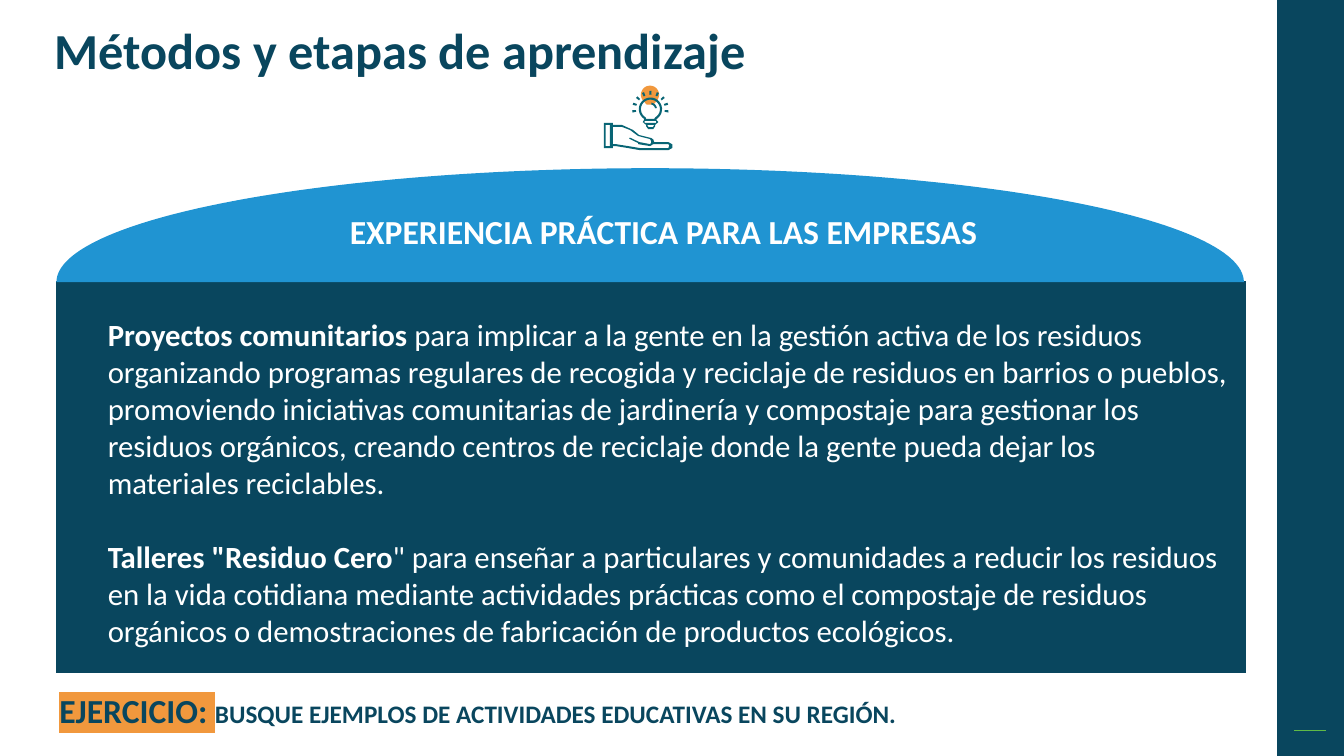
from math import cos, radians, sin

from lxml import etree
from pptx import Presentation
from pptx.dml import color
from pptx.enum import shapes, text
from pptx.oxml import ns
from pptx.util import Pt

COLORS = {
    "navy": "09465E",
    "blue": "2094D2",
    "white": "FFFFFF",
    "orange": "F1983D",
    "teal": "086575",
    "green": "60BA47",
}
FONT = "Calibri"

PALM = [
    [(46.1, 40.3), (36, 40.3), (35.3, 38.4), (33.8, 37.4), (25.2, 35.3), (20.9, 31.7),
     (13, 28.1), (6.5, 28.1), (6.5, 26.6), (0, 26.6), (0, 44.6), (6.5, 44.6), (6.5, 43.2),
     (8.6, 43.2), (17.3, 44.6), (25.9, 46.1), (46.1, 46.1), (49, 44.5), (49, 42)],
    [(1.4, 28.1), (4.3, 28.1), (4.3, 43.2), (1.4, 43.2)],
    [(46.1, 44.6), (25.9, 44.6), (17.3, 43.2), (8.6, 41.8), (6.5, 41.8), (6.5, 29.5),
     (13, 29.5), (18.7, 31.7), (24.5, 36), (33.1, 38.2), (33.8, 39.6), (33.8, 41),
     (33.1, 41.8), (25.2, 40.3), (19.4, 37.4), (18, 37.4), (18.7, 38.2), (24.5, 41),
     (24.5, 41.8), (33.1, 43.2), (35.3, 41.8), (46.1, 41.8), (46.8, 42.5)],
]
BULB_BASE = [(37.4, 24.5), (38.9, 26), (36.7, 28.1), (36.7, 29), (35.3, 31), (31.7, 31),
             (30.2, 29), (30.2, 28.1), (27.8, 26), (28.8, 24.5)]
BULB_NECK = [(36, 23.8), (30.2, 23.8)]
COLLAR = [(29.2, 25.2), (37.4, 25.2), (37.4, 26.6), (29.2, 26.6)]
TIP = [(31, 28.1), (36, 28.1), (35, 29.7), (32, 29.7)]


def rgb(name):
    """Return the named colour."""
    return color.RGBColor.from_string(COLORS[name])


def paint(shape, fill):
    """Give a shape a flat fill with no line or shadow."""
    shape.shadow.inherit = False
    shape.fill.solid()
    shape.fill.fore_color.rgb = rgb(fill)
    shape.line.fill.background()


def arc(center, across, down, start, end, steps=24):
    """Return points along an elliptical arc."""
    angles = [radians(start + (end - start) * i / steps) for i in range(steps + 1)]
    return [(center[0] + across * cos(a), center[1] + down * sin(a)) for a in angles]


def band(center, angle, spread, inner, outer):
    """Return the outline of a piece of a ring."""
    first, last = angle - spread, angle + spread
    return (arc(center, outer, outer, first, last, 8)
            + arc(center, inner, inner, last, first, 8))


def add_outline(page, box, contours, fill):
    """Draw closed contours placed relative to the box."""
    placed = [[(Pt(box[0] + x), Pt(box[1] + y)) for x, y in points] for points in contours]
    builder = page.shapes.build_freeform(*placed[0][0], scale=1.0)
    for number, points in enumerate(placed):
        if number:
            builder.move_to(*points[0])
        builder.add_line_segments(points[1:], close=True)
    paint(builder.convert_to_shape(), fill)


def place(shape, box):
    """Move a shape to the box."""
    shape.left, shape.top, shape.width, shape.height = map(Pt, box)


def set_frame(frame, anchor=text.MSO_ANCHOR.TOP):
    """Give a text frame fixed size, wrapping and standard margins."""
    frame.word_wrap = True
    frame.auto_size = text.MSO_AUTO_SIZE.NONE
    frame.vertical_anchor = anchor
    frame.margin_left = frame.margin_right = Pt(7.2)
    frame.margin_top = frame.margin_bottom = Pt(3.6)


def add_span(para, words, size, fill, bold=True):
    """Add one formatted run and return it."""
    span = para.add_run()
    span.text = words
    span.font.name = FONT
    span.font.size = Pt(size)
    span.font.bold = bold
    span.font.color.rgb = rgb(fill)
    return span


def highlight(span, name):
    """Put a highlight colour behind a run."""
    mark = etree.Element(ns.qn("a:highlight"))
    etree.SubElement(mark, ns.qn("a:srgbClr"), val=COLORS[name])
    span.font._element.find(ns.qn("a:solidFill")).addnext(mark)


def add_sidebar(page, box):
    """Draw the side strip and its short rule."""
    left, top, width, height = box
    strip = page.shapes.add_shape(shapes.MSO_SHAPE.RECTANGLE, *map(Pt, box))
    paint(strip, "navy")
    level = Pt(top + height - 18)
    rule = page.shapes.add_connector(shapes.MSO_CONNECTOR.STRAIGHT, Pt(left + 12.3), level,
                                     Pt(left + 34.6), level)
    rule.line.color.rgb = rgb("green")
    rule.line.width = Pt(1)
    etree.SubElement(rule.element.spPr, ns.qn("a:effectLst"))


def add_title(page, box):
    """Fill the title placeholder."""
    title = page.shapes.title
    place(title, box)
    set_frame(title.text_frame, text.MSO_ANCHOR.MIDDLE)
    para = title.text_frame.paragraphs[0]
    para.alignment = text.PP_ALIGN.LEFT
    para.line_spacing = 0.9
    add_span(para, "Métodos y etapas de aprendizaje", 36, "navy")


def add_icon(page, box):
    """Draw the hand holding a light bulb."""
    center = (33.3, 16.8)
    glow = arc((33, 6.5), 6.5, 6.5, 140, 400) + [(35.6, 13.5), (30.6, 13.5)]
    glass = arc(center, 8.3, 8.3, 125, 415) + BULB_BASE
    hollow = arc(center, 6.8, 6.8, 120, 420) + BULB_NECK
    add_outline(page, box, [glow], "orange")
    add_outline(page, box, [glass, hollow, COLLAR, TIP], "teal")
    add_outline(page, box, [band(center, -45, 35, 3.4, 4.7)], "teal")
    for step in range(-4, 5):
        add_outline(page, box, [band(center, -90 + step * 24.25, 3.5, 10.3, 13)], "teal")
    add_outline(page, box, PALM, "teal")


def add_dome(page, box):
    """Draw the domed heading above the panel."""
    left, top, width, height = box
    half = arc((width / 2, height), width / 2, height, 180, 360, 120)
    add_outline(page, box, [half], "blue")
    heading = page.shapes.add_textbox(Pt(left + 103.7), Pt(top + 26.7), Pt(660), Pt(36))
    set_frame(heading.text_frame)
    para = heading.text_frame.paragraphs[0]
    para.alignment = text.PP_ALIGN.CENTER
    add_span(para, "EXPERIENCIA PRÁCTICA PARA LAS EMPRESAS", 24, "white")


def add_panel(page, box, items):
    """Draw the panel and put the body placeholder on it."""
    left, top, width, height = box
    add_outline(page, box, [[(0, 0), (width, 0), (width, height), (0, height)]], "navy")
    body = page.placeholders[1]
    page.shapes.element.append(body.element)
    place(body, (left + 29.5, top + 20.9, 818.6, 247))
    paint(body, "navy")
    frame = body.text_frame
    set_frame(frame)
    for number, (lead, rest) in enumerate(items):
        para = frame.add_paragraph() if number else frame.paragraphs[0]
        props = para._p.get_or_add_pPr()
        props.set("marL", "0")
        props.set("indent", "0")
        etree.SubElement(props, ns.qn("a:buNone"))
        para.space_before = Pt(26.5 if number else 0)
        add_span(para, lead, 22, "white")
        add_span(para, rest, 22, "white", bold=False)


def add_exercise(page, box):
    """Write the exercise line."""
    note = page.shapes.add_textbox(*map(Pt, box))
    set_frame(note.text_frame)
    para = note.text_frame.paragraphs[0]
    highlight(add_span(para, "EJERCICIO: ", 24, "navy"), "orange")
    add_span(para, "BUSQUE EJEMPLOS DE ACTIVIDADES EDUCATIVAS EN SU REGIÓN.", 18, "navy")


def main():
    """Build the slide and save it."""
    deck = Presentation()
    deck.slide_width, deck.slide_height = Pt(960), Pt(540)
    page = deck.slides.add_slide(deck.slide_layouts[1])
    add_sidebar(page, (912.2, 0, 47.8, 540))
    add_title(page, (31.7, 17.3, 629.3, 41.8))
    add_panel(page, (40.3, 200.9, 849.6, 280), [
        ("Proyectos comunitarios ",
         "para implicar a la gente en la gestión activa de los residuos organizando programas "
         "regulares de recogida y reciclaje de residuos en barrios o pueblos, promoviendo "
         "iniciativas comunitarias de jardinería y compostaje para gestionar los residuos "
         "orgánicos, creando centros de reciclaje donde la gente pueda dejar los materiales "
         "reciclables."),
        ('Talleres "Residuo Cero',
         '" para enseñar a particulares y comunidades a reducir los residuos en la vida '
         "cotidiana mediante actividades prácticas como el compostaje de residuos orgánicos o "
         "demostraciones de fabricación de productos ecológicos."),
    ])
    add_dome(page, (40.3, 120.2, 848.2, 81.4))
    add_icon(page, (431.3, 61.2, 49, 46.1))
    add_exercise(page, (35.3, 489.6, 838, 36))
    deck.save("out.pptx")


if __name__ == "__main__":
    main()
